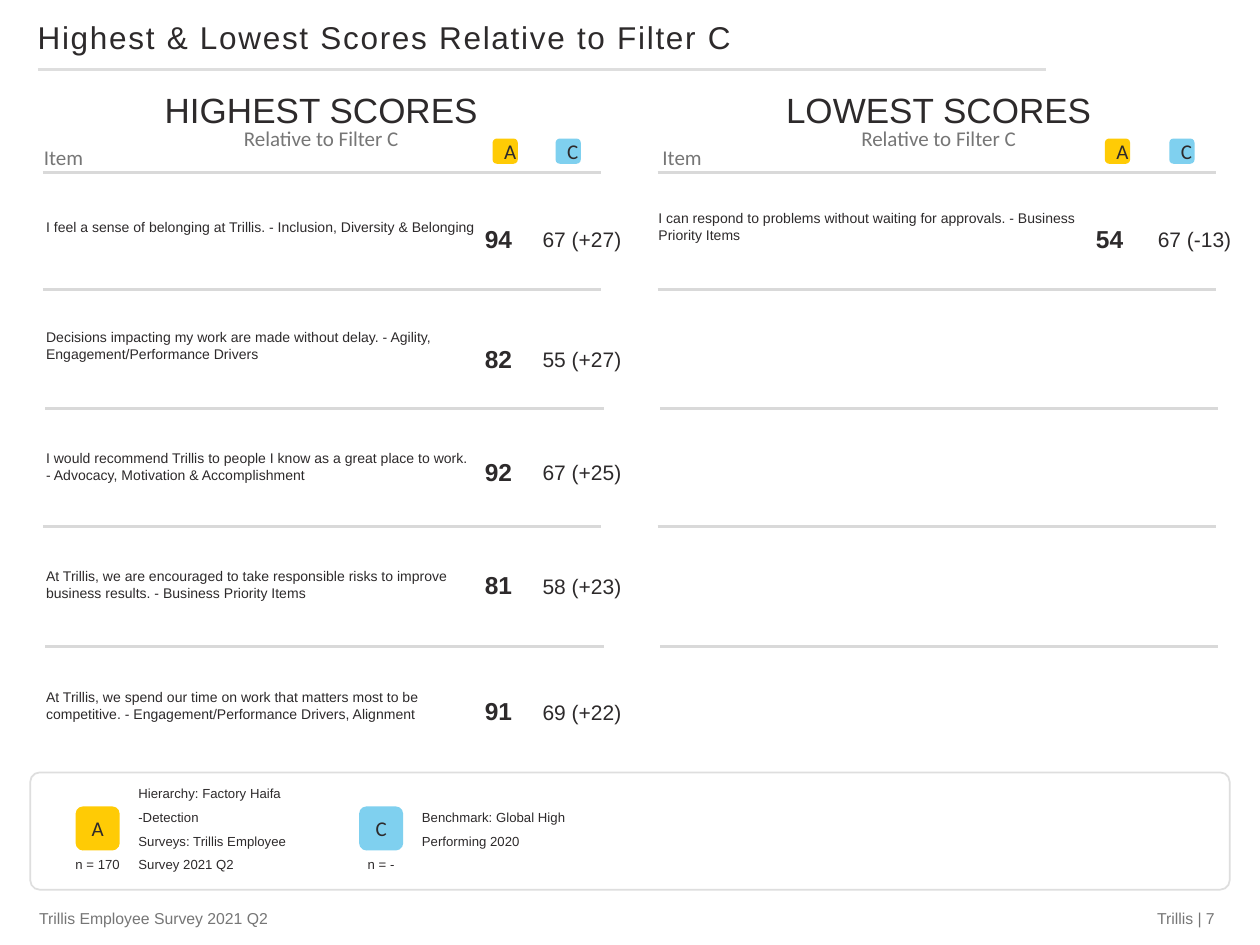
from pptx import Presentation
from pptx.dml.color import RGBColor
from pptx.enum.shapes import MSO_CONNECTOR, MSO_SHAPE
from pptx.enum.text import MSO_ANCHOR, PP_ALIGN
from pptx.oxml.ns import qn
from pptx.util import Pt
from lxml.etree import SubElement

INK = RGBColor(0x2D, 0x2A, 0x2B)
GREY = RGBColor(0x76, 0x76, 0x76)
FRAME = RGBColor(0xDE, 0xDE, 0xDE)
RULE = RGBColor(0xD9, 0xD9, 0xD9)
YELLOW = RGBColor(0xFF, 0xCB, 0x05)
BLUE = RGBColor(0x7F, 0xD0, 0xEF)
LEFT, CENTER, RIGHT = PP_ALIGN.LEFT, PP_ALIGN.CENTER, PP_ALIGN.RIGHT
TOP, MIDDLE = MSO_ANCHOR.TOP, MSO_ANCHOR.MIDDLE


def add_text(shapes, text, box, size, color=INK, font="Arial", align=LEFT, anchor=MIDDLE,
             insets=(7.2, 3.6, 7.2, 3.6), bold=False, spacing=None, rounded=False,
             fill=None, corner=None):
    place = [Pt(value) for value in box]
    if rounded:
        shape = shapes.add_shape(MSO_SHAPE.ROUNDED_RECTANGLE, *place)
        shape.shadow.inherit = False
        shape.line.fill.background()
        if corner:
            shape.adjustments[0] = corner
        if fill:
            shape.fill.solid()
            shape.fill.fore_color.rgb = fill
        else:
            shape.fill.background()
    else:
        shape = shapes.add_textbox(*place)
    frame = shape.text_frame
    frame.word_wrap = True
    frame.vertical_anchor = anchor
    frame.margin_left, frame.margin_top, frame.margin_right, frame.margin_bottom = map(Pt, insets)
    frame.text = text
    paragraph = frame.paragraphs[0]
    paragraph.alignment = align
    paragraph.line_spacing = spacing
    for run in paragraph.runs:
        run.font.size = Pt(size)
        run.font.name = font
        run.font.bold = bold
        run.font.color.rgb = color
    return shape


def add_rule(shapes, left, top, width, weight, color):
    rule = shapes.add_connector(MSO_CONNECTOR.STRAIGHT, Pt(left), Pt(top), Pt(left + width), Pt(top))
    rule.line.width = Pt(weight)
    rule.line.color.rgb = color
    SubElement(rule._element.spPr, qn("a:effectLst"))


presentation = Presentation()
presentation.slide_width, presentation.slide_height = Pt(720), Pt(540)
slide = presentation.slides.add_slide(presentation.slide_layouts[6])
shapes = slide.shapes

title = add_text(shapes, "Highest & Lowest Scores Relative to Filter C",
                 (14.4, 4.32, 630, 36), 18, spacing=0.9)
title.text_frame.paragraphs[0].runs[0].font._element.set("spc", "100")
add_rule(shapes, 21.6, 39.6, 576, 2, FRAME)

card_tops = [100.8, 168.5, 237.6, 305.3, 374.4]
score_tops = [115.9, 184.3, 249.1, 313.9, 385.9]
rule_tops = [98.6, 165.6, 233.3, 301, 369.4]

highest = [
    ("I feel a sense of belonging at Trillis. - Inclusion, Diversity & Belonging", "94", "67 (+27)"),
    ("Decisions impacting my work are made without delay. - Agility, "
     "Engagement/Performance Drivers", "82", "55 (+27)"),
    ("I would recommend Trillis to people I know as a great place to work. - Advocacy, "
     "Motivation & Accomplishment", "92", "67 (+25)"),
    ("At Trillis, we are encouraged to take responsible risks to improve business results. - "
     "Business Priority Items", "81", "58 (+23)"),
    ("At Trillis, we spend our time on work that matters most to be competitive. - "
     "Engagement/Performance Drivers, Alignment", "91", "69 (+22)"),
]
lowest = [
    ("I can respond to problems without waiting for approvals. - Business Priority Items",
     "54", "67 (-13)"),
]

columns = [
    ("HIGHEST SCORES", highest, 21.6, 18, 18, 270, 303.8, 281.5, 317.5, 24.5),
    ("LOWEST SCORES", lowest, 374.4, 371.5, 367.9, 619.2, 653.8, 631.4, 668.2, 375.8),
]
for (heading, items, heading_left, label_left, card_left, score_left,
     benchmark_left, a_left, c_left, rule_left) in columns:
    add_text(shapes, "Relative to Filter C", (heading_left, 68.4, 324, 21.6), 12, GREY, "Calibri",
             CENTER, TOP)
    add_text(shapes, heading, (heading_left, 46.8, 324, 28.8), 20, align=CENTER, anchor=TOP)
    add_text(shapes, "Item", (label_left, 79.2, 72, 21.6), 12, GREY, "Calibri", anchor=TOP)
    for letter, badge_left, color in (("A", a_left, YELLOW), ("C", c_left, BLUE)):
        add_text(shapes, letter, (badge_left, 79.2, 14.4, 14.4), 12, font="Calibri",
                 align=CENTER, rounded=True, fill=color)
    for row, rule_top in enumerate(rule_tops):
        shift = 1.4 if row in (2, 4) else 0
        add_rule(shapes, rule_left + shift, rule_top, 319, 1.5 if row else 2, RULE)
    for (item, score, benchmark), card_top, score_top in zip(items, card_tops, score_tops):
        add_text(shapes, item, (card_left, card_top, 334.8, 57.6), 8,
                 insets=(7.2, 3.6, 79.2, 3.6), rounded=True, corner=0.075)
        add_text(shapes, score, (score_left, score_top, 43.2, 41), 14, bold=True)
        add_text(shapes, benchmark, (benchmark_left, score_top + 2.9, 57.6, 36), 12,
                 align=CENTER, insets=(3.6, 3.6, 3.6, 3.6))

legend_frame = shapes.add_shape(MSO_SHAPE.ROUNDED_RECTANGLE, Pt(17.3), Pt(441.4), Pt(685.4), Pt(67))
legend_frame.adjustments[0] = 0.08
legend_frame.shadow.inherit = False
legend_frame.fill.background()
legend_frame.line.color.rgb = FRAME
legend_frame.line.width = Pt(1)

legend = [
    ("A", YELLOW, "Hierarchy: Factory Haifa -Detection\vSurveys: Trillis Employee Survey 2021 Q2",
     "n = 170", 43.2, 28.8),
    ("C", BLUE, "Benchmark: Global High Performing 2020", "n = -", 205.2, 190.8),
]
for letter, color, description, count, badge_left, count_left in legend:
    entry = shapes.add_group_shape().shapes
    add_text(entry, letter, (badge_left, 460.8, 25.2, 25.2), 12, font="Calibri", align=CENTER,
             rounded=True, fill=color)
    add_text(entry, description, (badge_left + 28.8, 450, 100.8, 43.2), 7.5, spacing=1.5)
    add_text(entry, count, (count_left, 486, 54, 18), 7.5, align=CENTER, anchor=TOP)

add_text(shapes, "Trillis Employee Survey 2021 Q2", (22.3, 512.6, 428.4, 23.8), 9, GREY,
         insets=(0, 3.6, 7.2, 3.6))
add_text(shapes, "Trillis | 7", (450.7, 512.6, 243.4, 23.8), 9, GREY, align=RIGHT,
         insets=(7.2, 3.6, 0, 3.6))

presentation.save("out.pptx")
